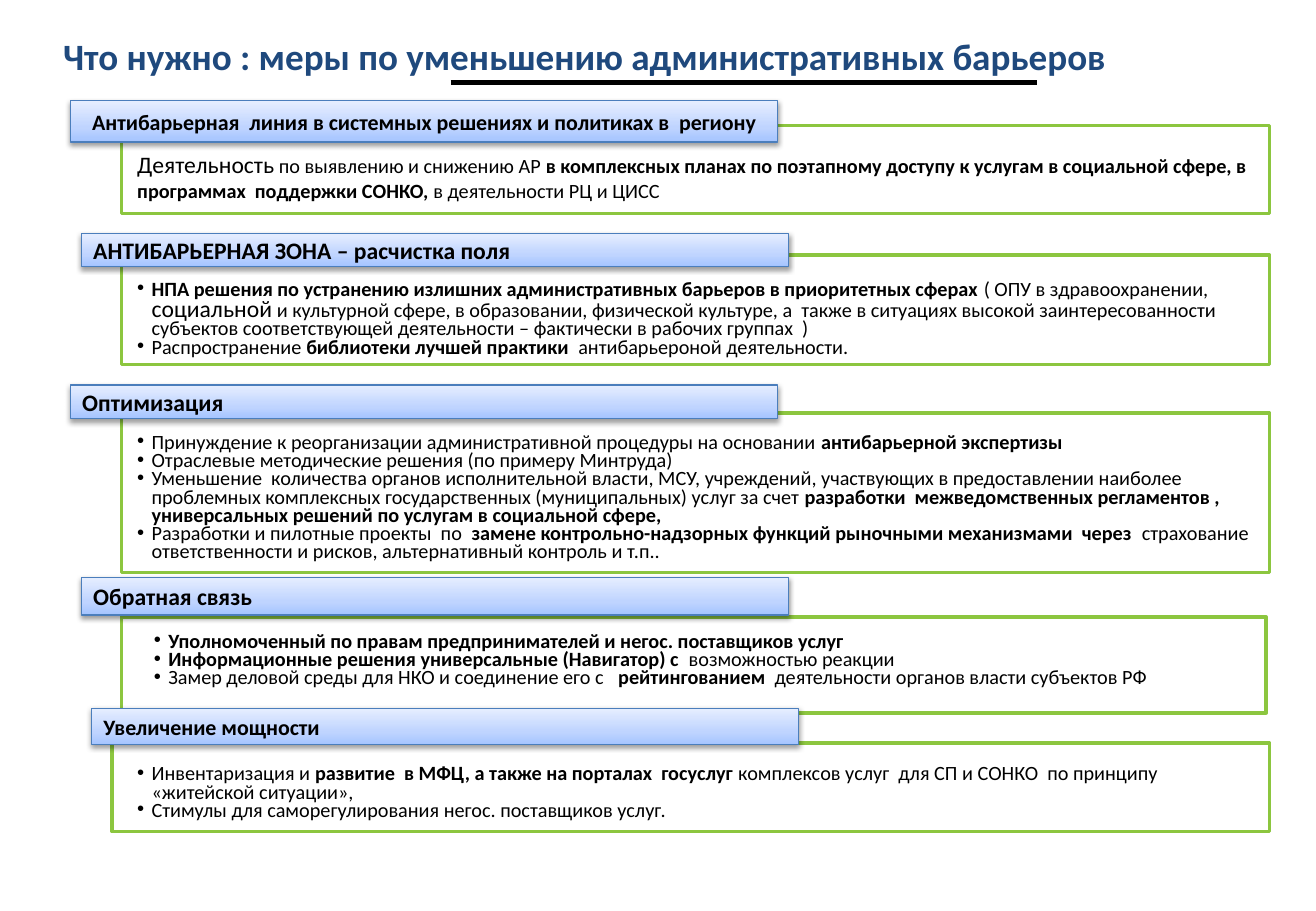
"""Build a slide listing measures that lower administrative barriers."""
import dataclasses

import lxml.etree
import pptx
import pptx.dml.color
import pptx.enum.shapes
import pptx.enum.text
import pptx.oxml
import pptx.oxml.ns
import pptx.util
from pptx.util import Cm, Pt

RGBColor = pptx.dml.color.RGBColor
Align = pptx.enum.text.PP_ALIGN
Rectangle = pptx.enum.shapes.MSO_SHAPE.RECTANGLE

BLACK = RGBColor(0x00, 0x00, 0x00)
WHITE = RGBColor(0xFF, 0xFF, 0xFF)
NAVY = RGBColor(0x1F, 0x49, 0x7D)
GREEN = RGBColor(0x8C, 0xC6, 0x3F)
BLUE = RGBColor(0x4B, 0x7E, 0xBC)
GRADIENT = (
    (0, RGBColor(0xA4, 0xC4, 0xFF)),
    (35, RGBColor(0xBF, 0xD4, 0xFF)),
    (100, RGBColor(0xE6, 0xEE, 0xFF)),
)

FONT = "Calibri"
RIGHT_EDGE = 26.54
HEADING_WIDTH = 14.78


@dataclasses.dataclass
class Span:
    """A stretch of body text in one style."""
    text: str
    bold: bool = False
    size: int = 12


@dataclasses.dataclass
class Section:
    """A heading, its frame and its text; places are left, top, height in cm."""
    heading: str
    heading_place: tuple
    frame_place: tuple
    body_place: tuple
    paras: list
    heading_size: int = 14
    heading_align: Align = Align.LEFT
    frame_right: float = RIGHT_EDGE
    bulleted: bool = True


def strong(text):
    """Return a bold span."""
    return Span(text, bold=True)


def large(text):
    """Return a span in larger type."""
    return Span(text, size=14)


SECTIONS = [
    Section(
        "Антибарьерная  линия в системных решениях и политиках в  региону",
        (1.47, 2.11, 0.86), (2.54, 2.62, 1.85), (2.62, 3.02, 1.37),
        [[large("Деятельность"), Span(" по выявлению и снижению АР "),
          strong("в комплексных планах по поэтапному доступу к услугам в социальной сфере, "
                 "в программах  поддержки СОНКО,"),
          Span(" в деятельности РЦ и ЦИСС")]],
        heading_size=13, heading_align=Align.CENTER, bulleted=False),
    Section(
        "АНТИБАРЬЕРНАЯ ЗОНА – расчистка поля",
        (1.7, 4.88, 0.69), (2.54, 5.33, 2.29), (2.62, 5.77, 1.85),
        [[strong("НПА решения по устранению излишних административных барьеров "
                 "в приоритетных сферах "),
          Span("( ОПУ в здравоохранении, "), large("социальной"),
          Span(" и культурной сфере, в образовании, физической культуре, а  также "
               "в ситуациях высокой заинтересованности  субъектов соответствующей "
               "деятельности – фактически в рабочих группах  )")],
         [Span("Распространение "), strong("библиотеки лучшей практики  "),
          Span("антибарьероной деятельности.")]]),
    Section(
        "Оптимизация",
        (1.47, 8.05, 0.71), (2.54, 8.64, 3.33), (2.62, 8.97, 2.97),
        [[Span("Принуждение к реорганизации административной процедуры на основании "),
          strong("антибарьерной экспертизы")],
         [Span("Отраслевые методические решения (по примеру Минтруда)")],
         [Span("Уменьшение  количества органов исполнительной власти, МСУ, учреждений, "
               "участвующих в предоставлении наиболее проблемных комплексных "
               "государственных (муниципальных) услуг за счет "),
          strong("разработки  межведомственных регламентов , универсальных решений "
                 "по услугам в социальной сфере,")],
         [Span("Разработки и пилотные проекты  по "),
          strong(" замене контрольно-надзорных функций рыночными механизмами  через  "),
          Span("страхование ответственности и рисков, альтернативный контроль и т.п..")]]),
    Section(
        "Обратная связь",
        (1.7, 12.07, 0.79), (2.54, 12.9, 2.01), (2.97, 13.13, 1.42),
        [[strong("Уполномоченный по правам предпринимателей и негос. поставщиков услуг")],
         [strong("Информационные решения универсальные (Навигатор) с "),
          Span(" возможностью реакции")],
         [Span("Замер деловой среды для НКО и соединение его с   "),
          strong("рейтингованием  "),
          Span("деятельности органов власти субъектов РФ")]],
        frame_right=26.47),
    Section(
        "Увеличение мощности",
        (1.91, 14.81, 0.76), (2.34, 15.54, 1.85), (2.62, 15.9, 1.42),
        [[Span("Инвентаризация и "),
          strong("развитие  в МФЦ, а также на порталах  госуслуг "),
          Span("комплексов услуг  для СП и СОНКО  по принципу «житейской ситуации»,")],
         [Span("Стимулы для саморегулирования негос. поставщиков услуг.")]],
        heading_size=13),
]


def add_element(parent, tag, **attributes):
    """Append a DrawingML element and return it."""
    return lxml.etree.SubElement(parent, pptx.oxml.ns.qn(tag), attributes)


def write_line(para, text, size, color):
    """Write a bold one-style line into a paragraph."""
    para.text = text
    para.font.name = FONT
    para.font.size = Pt(size)
    para.font.bold = True
    para.font.color.rgb = color


def add_text_box(page, left, top, width, height):
    """Add a wrapping text box that grows with its text."""
    box = page.shapes.add_textbox(Cm(left), Cm(top), Cm(width), Cm(height))
    box.text_frame.word_wrap = True
    box.text_frame.auto_size = pptx.enum.text.MSO_AUTO_SIZE.SHAPE_TO_FIT_TEXT
    return box.text_frame


def add_rectangle(page, left, top, width, height, line_color, line_width):
    """Add a rectangle with an outline and no shadow."""
    box = page.shapes.add_shape(Rectangle, Cm(left), Cm(top), Cm(width), Cm(height))
    box.line.color.rgb = line_color
    box.line.width = Pt(line_width)
    box.shadow.inherit = False
    return box


def add_frame(page, section):
    """Add the green frame of a section."""
    left, top, height = section.frame_place
    frame = add_rectangle(page, left, top, section.frame_right - left, height, GREEN, 2)
    frame.fill.solid()
    frame.fill.fore_color.rgb = WHITE


def add_heading(page, section):
    """Add the shaded heading bar of a section."""
    left, top, height = section.heading_place
    bar = add_rectangle(page, left, top, HEADING_WIDTH, height, BLUE, 0.75)
    bar.fill.gradient()
    bar.fill.gradient_angle = 90
    properties = bar._element.spPr
    stops = properties.find(".//" + pptx.oxml.ns.qn("a:gsLst"))
    stops.clear()
    for position, color in GRADIENT:
        stop = add_element(stops, "a:gs", pos=str(position * 1000))
        add_element(stop, "a:srgbClr", val=str(color))
    effects = properties.find(pptx.oxml.ns.qn("a:effectLst"))
    shadow = add_element(effects, "a:outerShdw", blurRad=str(Pt(3.1)), dist=str(Pt(1.6)),
                         dir="5400000", rotWithShape="0")
    shade = add_element(shadow, "a:srgbClr", val=str(BLACK))
    add_element(shade, "a:alpha", val="38000")
    bar.text_frame.word_wrap = True
    bar.text_frame.vertical_anchor = pptx.enum.text.MSO_ANCHOR.MIDDLE
    para = bar.text_frame.paragraphs[0]
    para.alignment = section.heading_align
    write_line(para, section.heading, section.heading_size, BLACK)


def add_bullet(para):
    """Give a paragraph a hanging bullet and tight lines."""
    para.line_spacing = 0.75
    properties = para._p.get_or_add_pPr()
    properties.set("marL", str(Cm(0.3)))
    properties.set("indent", str(-Cm(0.3)))
    add_element(properties, "a:buFont", typeface="Arial")
    add_element(properties, "a:buChar", char="•")


def add_body(page, section):
    """Add the text of a section."""
    left, top, height = section.body_place
    text_frame = add_text_box(page, left, top, RIGHT_EDGE - left, height)
    for index, spans in enumerate(section.paras):
        para = text_frame.add_paragraph() if index else text_frame.paragraphs[0]
        if section.bulleted:
            add_bullet(para)
        para.font.name = FONT
        para.font.color.rgb = BLACK
        for span in spans:
            run = para.add_run()
            run.text = span.text
            run.font.size = Pt(span.size)
            run.font.bold = span.bold


def add_title(page):
    """Add the title and the rule below it."""
    title = add_text_box(page, 1.07, 0.58, 25.48, 1.19)
    write_line(title.paragraphs[0],
               "Что нужно : меры по уменьшению административных барьеров", 22, NAVY)
    rule = page.shapes.add_connector(pptx.enum.shapes.MSO_CONNECTOR.STRAIGHT,
                                     Cm(9.42), Cm(1.73), Cm(21.67), Cm(1.73))
    rule.line.color.rgb = BLACK
    rule.line.width = Pt(3)
    add_element(rule._element.spPr, "a:effectLst")


def main():
    """Build the deck and save it."""
    deck = pptx.Presentation()
    deck.slide_width = Cm(27.51)
    deck.slide_height = Cm(19.05)
    page = deck.slides.add_slide(deck.slide_layouts[6])
    add_title(page)
    for section in SECTIONS:
        add_frame(page, section)
        add_heading(page, section)
        add_body(page, section)
    deck.save("out.pptx")


if __name__ == "__main__":
    main()
